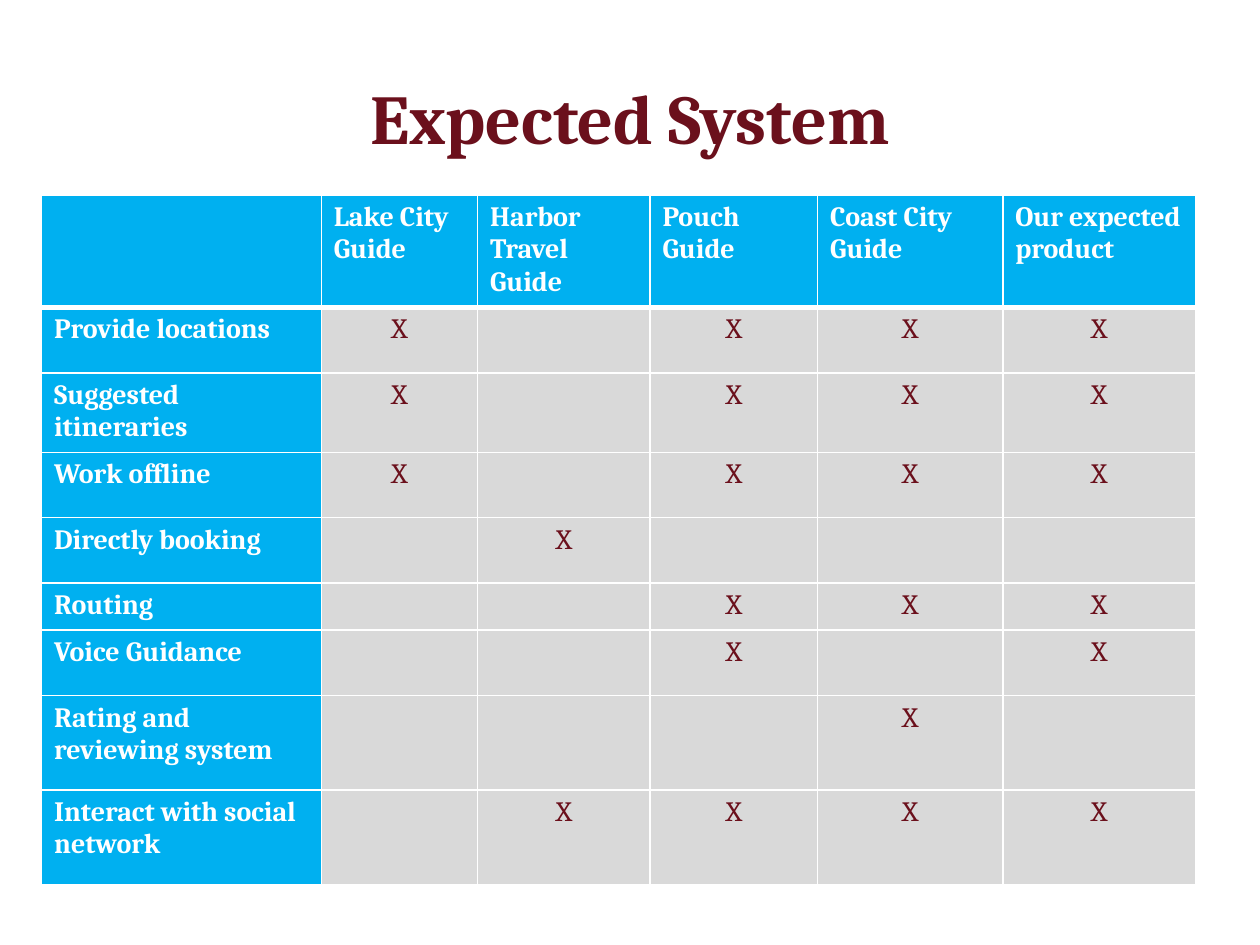
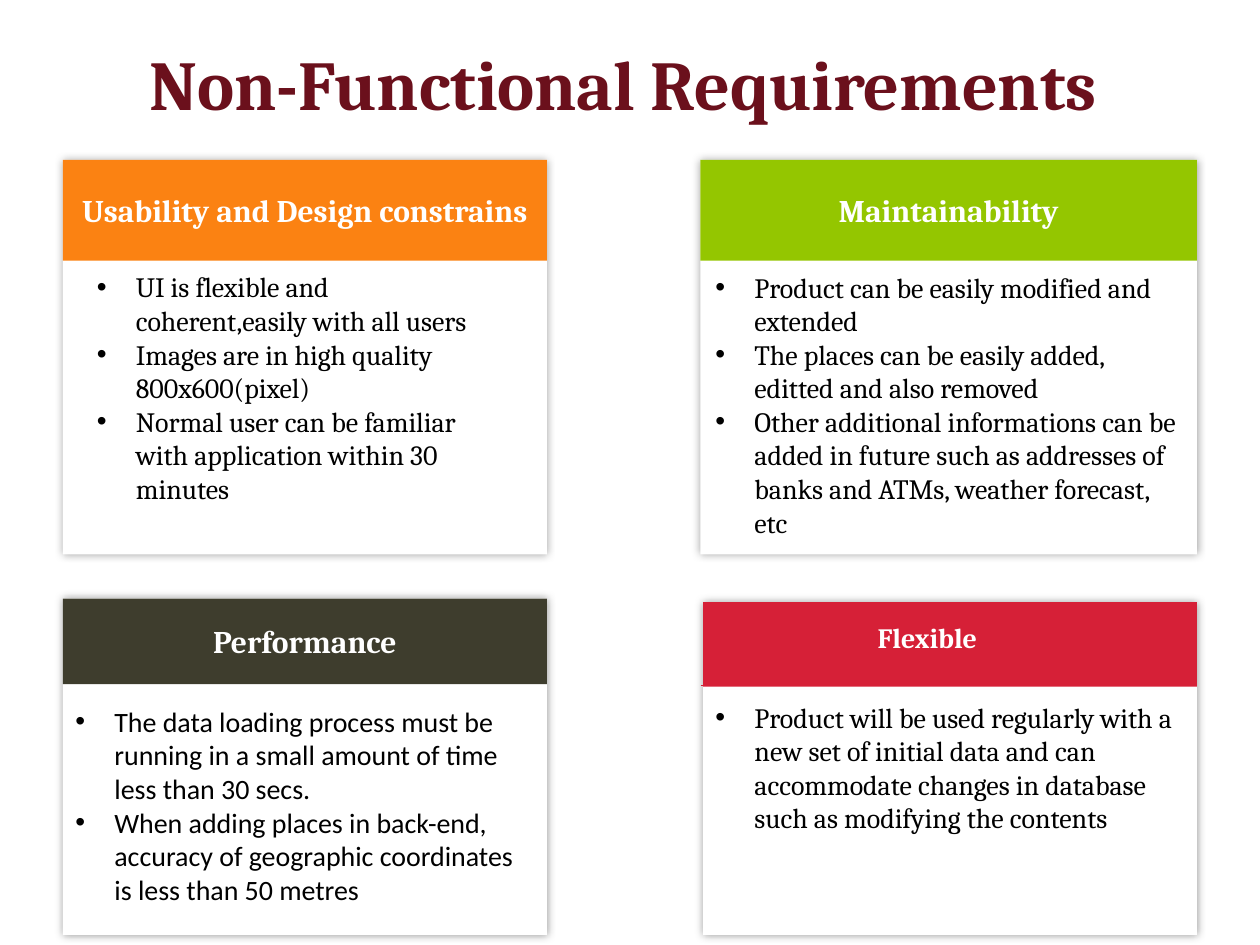
from lxml import etree
from pptx import Presentation, util as u
from pptx.dml.color import RGBColor
from pptx.enum import dml, shapes, text
from pptx.oxml.ns import qn

# Shared look
MAROON = RGBColor(0x6B, 0x10, 0x1C)
WHITE = RGBColor(0xFF, 0xFF, 0xFF)
BLACK = RGBColor(0, 0, 0)
SKY = RGBColor(0x00, 0xB0, 0xF0)
GREY = RGBColor(0xD9, 0xD9, 0xD9)
ORANGE = RGBColor(0xFB, 0x82, 0x12)
GREEN = RGBColor(0x94, 0xC6, 0x00)
OLIVE = RGBColor(0x3E, 0x3D, 0x2D)
RED = RGBColor(0xD6, 0x20, 0x37)
SERIF, SANS = "Cambria", "Calibri"
CENTER = text.PP_ALIGN.CENTER
MIDDLE = text.MSO_ANCHOR.MIDDLE

# The slide is a grid of 100 columns by 75 rows
COLUMNS, ROWS = 100, 75
CELL = u.Inches(0.1)

PRODUCTS = ["Lake City Guide", "Harbor Travel Guide", "Pouch Guide",
            "Coast City Guide", "Our expected product"]
FEATURES = [  # name, one mark per product, row height
    ("Provide locations", "X XXX", 5.2),
    ("Suggested itineraries", "X XXX", 6.3),
    ("Work offline", "X XXX", 5.2),
    ("Directly booking", " X   ", 5.2),
    ("Routing", "  XXX", 3.6),
    ("Voice Guidance", "  X X", 5.2),
    ("Rating and reviewing system", "   X ", 7.5),
    ("Interact with social network", " XXXX", 7.5),
]
PRODUCT_WIDTHS = [12.4, 13.7, 13.3, 14.7, 15.3]
FEATURE_WIDTH, HEADER_HEIGHT = 22.2, 8.9


def grid(*values):
    return [round(value * CELL) for value in values]


def child(parent, tag, **attributes):
    return etree.SubElement(parent, qn(tag), **attributes)


def add_run(paragraph, words, size, color, bold=False, font=SERIF):
    run = paragraph.add_run()
    run.text = words
    run.font.name = font
    run.font.size = u.Pt(size)
    run.font.bold = bold
    run.font.color.rgb = color


def add_title_slide(presentation, title, area):
    slide = presentation.slides.add_slide(presentation.slide_layouts[5])
    shape = slide.shapes.title
    shape.left, shape.top, shape.width, shape.height = grid(*area)
    shape.text_frame.vertical_anchor = MIDDLE
    paragraph = shape.text_frame.paragraphs[0]
    paragraph.alignment = CENTER
    add_run(paragraph, title, 40, MAROON, bold=True)
    return slide


# Table parts
def set_borders(cell, bottom):
    properties = cell._tc.get_or_add_tcPr()
    for position, (side, width) in enumerate(
            [("L", 1), ("R", 1), ("T", 1), ("B", bottom)]):
        line = etree.Element(qn(f"a:ln{side}"), w=str(u.Pt(width)))
        child(child(line, "a:solidFill"), "a:srgbClr", val=str(WHITE))
        properties.insert(position, line)


def fill_cell(cell, words, fill, color, bold=False, alignment=None, bottom=1):
    cell.fill.solid()
    cell.fill.fore_color.rgb = fill
    set_borders(cell, bottom)
    paragraph = cell.text_frame.paragraphs[0]
    paragraph.alignment = alignment
    if words:
        add_run(paragraph, words, 16, color, bold)
    else:
        child(paragraph._p, "a:endParaRPr", sz="1600")


def add_feature_table(slide, left, top):
    widths = [FEATURE_WIDTH] + PRODUCT_WIDTHS
    heights = [HEADER_HEIGHT] + [height for _, _, height in FEATURES]
    table = slide.shapes.add_table(
        len(heights), len(widths),
        *grid(left, top, sum(widths), sum(heights))).table
    table.horz_banding = False
    for column, width in zip(table.columns, grid(*widths)):
        column.width = width
    for row, height in zip(table.rows, grid(*heights)):
        row.height = height
    for column, product in enumerate([""] + PRODUCTS):
        fill_cell(table.cell(0, column), product, SKY, WHITE, True, bottom=3)
    for row, (feature, marks, _) in enumerate(FEATURES, 1):
        fill_cell(table.cell(row, 0), feature, SKY, WHITE, True)
        for column, mark in enumerate(marks, 1):
            fill_cell(table.cell(row, column), mark.strip(), GREY, MAROON,
                      alignment=CENTER)


# Card parts
def add_rectangle(group, area, fill):
    shape = group.shapes.add_shape(shapes.MSO_SHAPE.RECTANGLE, *grid(*area))
    shape.shadow.inherit = False
    shape.fill.solid()
    shape.fill.fore_color.rgb = fill
    shape.line.fill.background()
    return shape


def add_soft_shadow(shape):
    effects = shape._element.spPr.find(qn("a:effectLst"))
    shadow = child(effects, "a:outerShdw", blurRad=str(u.Pt(5)), dist="0",
                   algn="ctr", rotWithShape="0")
    color = child(shadow, "a:srgbClr", val=str(BLACK))
    child(color, "a:alpha", val="40000")


def add_dashed_line(group, left, right, top, color):
    line = group.shapes.add_connector(
        shapes.MSO_CONNECTOR.STRAIGHT, *grid(left, top, right, top))
    line.line.color.rgb = color
    line.line.width = u.Pt(1)
    line.line.dash_style = dml.MSO_LINE.DASH
    child(line._element.spPr, "a:effectLst")


def write_heading(shape, words, size):
    frame = shape.text_frame
    frame.word_wrap = True
    frame.vertical_anchor = MIDDLE
    frame.paragraphs[0].alignment = CENTER
    add_run(frame.paragraphs[0], words, size, WHITE, bold=True)


def add_card(slide, area, header_height, color, heading=None, dashes=None):
    left, top, width, _ = area
    group = slide.shapes.add_group_shape()
    add_soft_shadow(add_rectangle(group, area, WHITE))
    header = add_rectangle(group, (left, top, width, header_height), color)
    if heading:
        write_heading(header, heading, 18)
    if dashes:
        add_dashed_line(group, *dashes, color)


def add_bullets(slide, area, items, font=SERIF):
    frame = slide.shapes.add_textbox(*grid(*area)).text_frame
    frame.word_wrap = True
    frame.vertical_anchor = MIDDLE
    indent = u.Inches(0.31)
    for index, item in enumerate(items):
        paragraph = frame.add_paragraph() if index else frame.paragraphs[0]
        properties = paragraph._p.get_or_add_pPr()
        properties.set("marL", str(indent))
        properties.set("indent", str(-indent))
        child(properties, "a:buFont", typeface="Arial")
        child(properties, "a:buChar", char="•")
        add_run(paragraph, item, 16, BLACK, font=font)


def build_expected_system(presentation):
    slide = add_title_slide(presentation, "Expected System", (5, 3, 90, 12.5))
    add_feature_table(slide, 3.3, 15.5)


def build_requirements(presentation):
    slide = add_title_slide(presentation, "Non-Functional Requirements",
                            (5, 2.7, 88.9, 7.7))
    # Cards
    add_card(slide, (5, 12.7, 38.4, 31.3), 8, ORANGE,
             "Usability and Design constrains", (5, 43.4, 20.3))
    add_card(slide, (55.6, 12.7, 39.4, 31.3), 8, GREEN, "Maintainability")
    add_card(slide, (5, 47.5, 38.4, 26.7), 6.8, OLIVE, "Performance")
    add_card(slide, (55.8, 47.8, 39.2, 26.4), 6.7, RED,
             dashes=(55.6, 94.8, 54.4))
    # Card texts
    add_bullets(slide, (6.7, 20.8, 33.8, 19.9), [
        "UI is flexible and coherent,easily with all users",
        "Images are in high quality 800x600(pixel)",
        "Normal user can be familiar with application within 30 minutes"])
    add_bullets(slide, (5, 55.3, 38.4, 17.2), [
        "The data loading process must be running in a small amount of time "
        "less than 30 secs.",
        "When adding places in back-end, accuracy of geographic coordinates "
        "is less than 50 metres"], SANS)
    add_bullets(slide, (55.8, 20.8, 39, 22.6), [
        "Product can be easily modified and extended",
        "The places can be easily added, editted and also removed",
        "Other additional informations can be added in future such as "
        "addresses of banks and ATMs, weather forecast, etc"])
    add_bullets(slide, (55.8, 55, 39, 11.8), [
        "Product will be used regularly with a new set of initial data and "
        "can accommodate changes in database such as modifying the contents"])
    flexible = slide.shapes.add_textbox(*grid(60.9, 48.7, 25.4, 3.7))
    write_heading(flexible, "Flexible", 16)


def main():
    presentation = Presentation()
    presentation.slide_width, presentation.slide_height = grid(COLUMNS, ROWS)
    build_expected_system(presentation)
    build_requirements(presentation)
    presentation.save("out.pptx")


if __name__ == "__main__":
    main()
